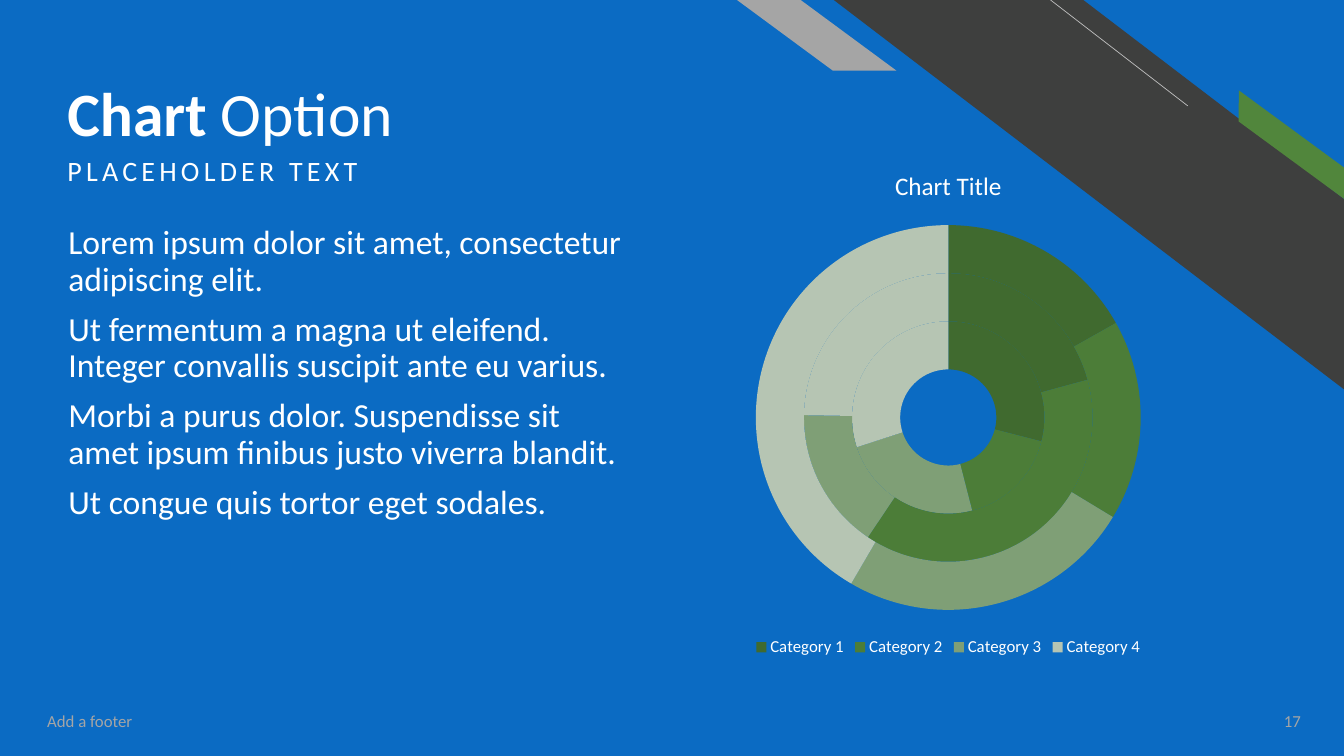
from dataclasses import dataclass

from lxml import etree
from pptx import Presentation
from pptx.chart.data import CategoryChartData
from pptx.dml.color import RGBColor
from pptx.enum.chart import XL_CHART_TYPE, XL_LEGEND_POSITION
from pptx.enum.shapes import MSO_CONNECTOR, MSO_SHAPE
from pptx.enum.text import MSO_ANCHOR, PP_ALIGN
from pptx.oxml.ns import qn
from pptx.util import Inches, Pt

FONT = "Calibri"
WHITE, GRAY, CHARCOAL = "FFFFFF", "A5A5A5", "3E3F3E"
BLUE, GREEN, LINE_GRAY = "0B6BC3", "51863C", "BFBFBF"
RECTANGLE, STRIPE = MSO_SHAPE.RECTANGLE, MSO_SHAPE.DIAGONAL_STRIPE
PARALLELOGRAM = MSO_SHAPE.PARALLELOGRAM
TOP, MIDDLE, BOTTOM = MSO_ANCHOR.TOP, MSO_ANCHOR.MIDDLE, MSO_ANCHOR.BOTTOM
LEFT, RIGHT = PP_ALIGN.LEFT, PP_ALIGN.RIGHT


@dataclass
class Band:
    kind: MSO_SHAPE
    place: tuple[float, float, float, float]
    color: str
    adjustment: float | None = None
    rotation: float = 0


@dataclass
class TextBlock:
    place: tuple[float, float, float, float]
    paragraphs: list[list[str]]
    size: float
    color: str = WHITE
    anchor: MSO_ANCHOR = TOP
    align: PP_ALIGN = LEFT
    line_spacing: float = 0.9
    space_before: float = 0
    letter_spacing: float = 0
    bottom_inset: float = 0.05
    bold_first: bool = False


BACKDROP = Band(RECTANGLE, (0, 0, 13.33, 7.5), BLUE)
CHARCOAL_STRIPE = Band(STRIPE, (8.27, 0, 5.07, 3.87), CHARCOAL, 0.512)
ACCENTS = [
    Band(PARALLELOGRAM, (12.07, 1.31, 1.48, 0.25), GREEN, 0.72, 36.3),
    Band(PARALLELOGRAM, (7.31, 0, 1.58, 0.7), GRAY, 1.356),
]

TEXTS = [
    TextBlock((0.57, 0.23, 9.11, 1.26), [["Chart ", "Option"]], 44,
              anchor=BOTTOM, bottom_inset=0, bold_first=True),
    TextBlock((0.57, 1.51, 8.06, 0.67), [["PLACEHOLDER TEXT"]], 20,
              space_before=10, letter_spacing=3),
    TextBlock((0.58, 2.19, 5.71, 4.47), [
        ["Lorem ipsum dolor sit amet, consectetur adipiscing elit."],
        ["Ut fermentum a magna ut eleifend. Integer convallis suscipit ante eu varius."],
        ["Morbi a purus dolor. Suspendisse sit amet ipsum finibus justo viverra blandit."],
        ["Ut congue quis tortor eget sodales."],
    ], 24, space_before=10),
    TextBlock((0.37, 6.95, 4.5, 0.4), [["Add a footer"]], 12, GRAY, MIDDLE,
              line_spacing=1),
    TextBlock((12.19, 6.95, 0.81, 0.4), [["17"]], 12, GRAY, MIDDLE, RIGHT,
              line_spacing=1),
]

CHART_PLACE = (5.52, 1.47, 7.77, 5.09)
RING_LAYOUT = {"x": 0.25, "y": 0.15, "w": 0.5, "h": 0.75}
CATEGORY_COLORS = ["406A2F", "4C7D38", "7F9F76", "B6C5B3"]
RINGS = [(29, 17, 24, 30), (21, 39, 16, 25), (17, 17, 25, 42)]


def rgb(color: str) -> RGBColor:
    return RGBColor.from_string(color)


def style_font(font, size: float, color: str) -> None:
    font.name = FONT
    font.size = Pt(size)
    font.color.rgb = rgb(color)


def draw_band(page, band: Band) -> None:
    shape = page.shapes.add_shape(band.kind, *map(Inches, band.place))
    shape.shadow.inherit = False
    shape.fill.solid()
    shape.fill.fore_color.rgb = rgb(band.color)
    shape.line.fill.background()
    if band.adjustment is not None:
        shape.adjustments[0] = band.adjustment
        shape.element.spPr.find(qn("a:xfrm")).set("flipH", "1")
    shape.rotation = band.rotation


def draw_thin_line(page) -> None:
    ends = map(Inches, (11.78, 1.05, 10.42, 0))
    line = page.shapes.add_connector(MSO_CONNECTOR.STRAIGHT, *ends)
    line.line.color.rgb = rgb(LINE_GRAY)
    line.line.width = Pt(0.5)
    etree.SubElement(line.element.spPr, qn("a:effectLst"))


def draw_text(page, block: TextBlock) -> None:
    box = page.shapes.add_textbox(*map(Inches, block.place))
    frame = box.text_frame
    frame.word_wrap = True
    frame.vertical_anchor = block.anchor
    frame.margin_bottom = Inches(block.bottom_inset)
    for index, spans in enumerate(block.paragraphs):
        para = frame.add_paragraph() if index else frame.paragraphs[0]
        para.alignment = block.align
        para.line_spacing = block.line_spacing
        para.space_before = Pt(block.space_before)
        style_font(para.font, block.size, block.color)
        for position, text in enumerate(spans):
            span = para.add_run()
            span.text = text
            if block.bold_first:
                span.font.bold = position == 0
            if block.letter_spacing:
                span.font._element.set("spc", str(int(block.letter_spacing * 100)))


def place_rings(chart) -> None:
    plot_area = chart._chartSpace.chart.plotArea
    for old_layout in plot_area.findall(qn("c:layout")):
        plot_area.remove(old_layout)
    layout = etree.Element(qn("c:layout"))
    manual = etree.SubElement(layout, qn("c:manualLayout"))
    settings = {"layoutTarget": "inner", "xMode": "edge", "yMode": "edge", **RING_LAYOUT}
    for name, value in settings.items():
        etree.SubElement(manual, qn(f"c:{name}")).set("val", str(value))
    plot_area.insert(0, layout)


def draw_chart(page) -> None:
    data = CategoryChartData()
    data.categories = [f"Category {n}" for n in range(1, len(CATEGORY_COLORS) + 1)]
    for number, values in enumerate(RINGS, 1):
        data.add_series(f"Series {number}", values)
    chart = page.shapes.add_chart(
        XL_CHART_TYPE.DOUGHNUT, *map(Inches, CHART_PLACE), data).chart
    style_font(chart.font, 10, "3F3F3F")

    chart.has_title = True
    title = chart.chart_title.text_frame
    title.text = "Chart Title"
    style_font(title.paragraphs[0].font, 18, WHITE)
    title.paragraphs[0].font.bold = False

    chart.has_legend = True
    chart.legend.position = XL_LEGEND_POSITION.BOTTOM
    chart.legend.include_in_layout = False
    style_font(chart.legend.font, 12, WHITE)

    chart.plots[0].vary_by_categories = True
    for ring in chart.plots[0].series:
        for index, color in enumerate(CATEGORY_COLORS):
            look = ring.points[index].format
            look.fill.solid()
            look.fill.fore_color.rgb = rgb(color)
            look.line.fill.background()
    place_rings(chart)


def main() -> None:
    deck = Presentation()
    deck.slide_width, deck.slide_height = Inches(13.33), Inches(7.5)
    page = deck.slides.add_slide(deck.slide_layouts[6])

    # Background and diagonal decoration
    draw_band(page, BACKDROP)
    draw_band(page, CHARCOAL_STRIPE)
    draw_thin_line(page)
    for accent in ACCENTS:
        draw_band(page, accent)

    # Title, body and footer
    for block in TEXTS:
        draw_text(page, block)

    # Ring chart
    draw_chart(page)
    deck.save("out.pptx")


if __name__ == "__main__":
    main()
